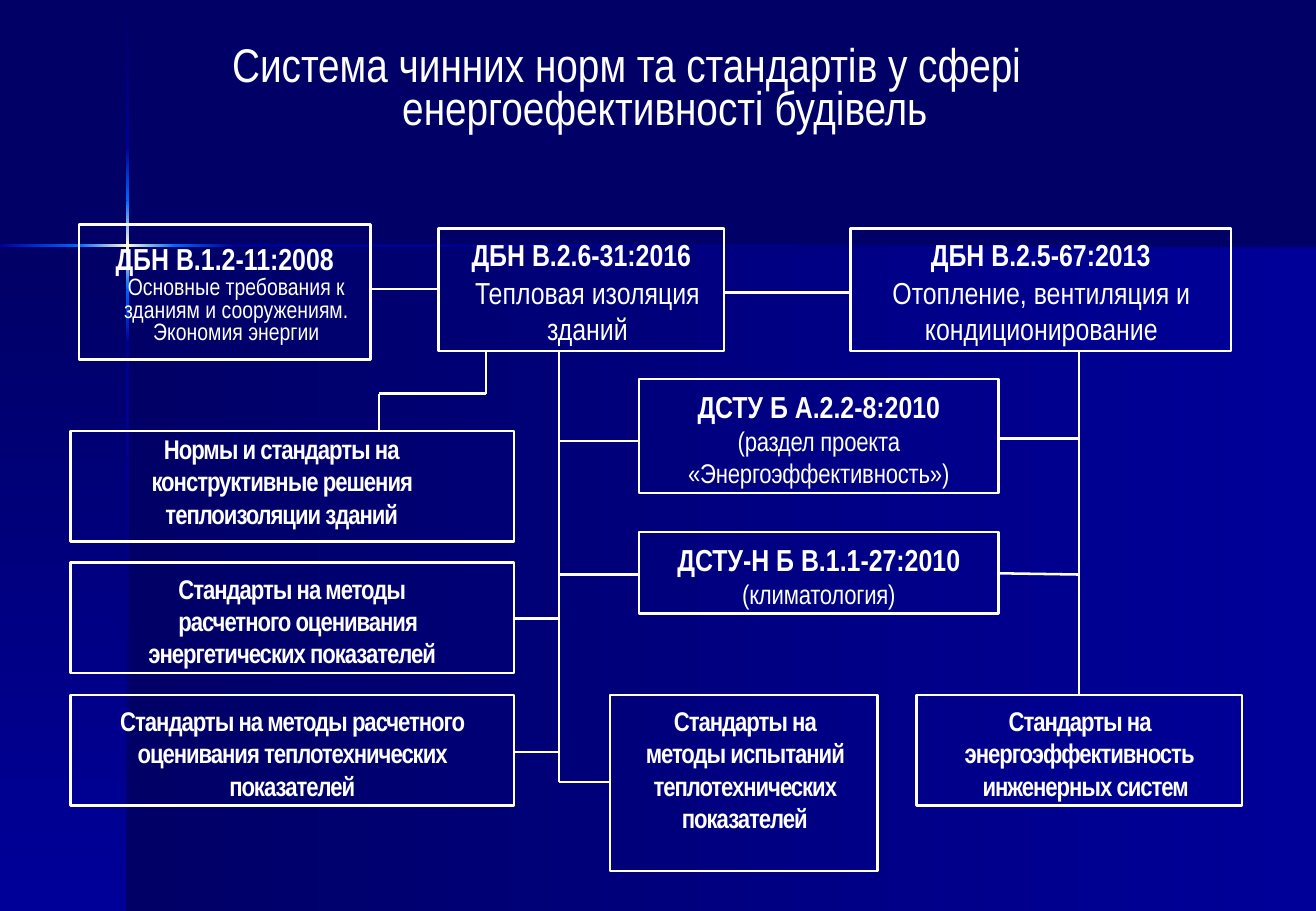
from collections import namedtuple
from dataclasses import dataclass
from itertools import pairwise

from lxml.etree import SubElement
from pptx import Presentation
from pptx.dml.color import RGBColor
from pptx.enum.shapes import MSO_CONNECTOR, MSO_SHAPE
from pptx.enum.text import MSO_ANCHOR, MSO_AUTO_SIZE, PP_ALIGN
from pptx.oxml.ns import qn
from pptx.util import Inches, Pt

Box = namedtuple("Box", "left top width height")
TextStyle = namedtuple("TextStyle", "size bold leading before spacing", defaults=(0, 0))


@dataclass(frozen=True)
class Theme:
    font: str = "Arial Narrow"
    white: str = "FFFFFF"
    navy: str = "000066"
    blue: str = "000099"
    azure: str = "0066FF"
    cream: str = "FFFFCC"
    line: float = 1.5
    title: TextStyle = TextStyle(28, False, Pt(25.9))
    code: TextStyle = TextStyle(18, True, Pt(21.4))
    subject: TextStyle = TextStyle(18, False, Pt(21.6), 0.4)
    detail: TextStyle = TextStyle(14, False, 0.8, 0.4)
    remark: TextStyle = TextStyle(16, False, Pt(19), 0, -0.1)
    group: TextStyle = TextStyle(16, True, 1.0, 0, -0.6)


THEME = Theme()
SLIDE = Box(0, 0, 10.83, 7.5)
STAR_X, STAR_Y, BEAM = 1.05, 2.02, 0.02

# Box, (left, top, right) insets, paragraphs of (text, style, indent)
NORMS = {
    "requirements": (Box(0.65, 1.85, 2.4, 1.11), (0.05, 0.13, 0.05), [
        ("ДБН В.1.2-11:2008", THEME.code, 0),
        ("Основные требования к зданиям и сооружениям. Экономия энергии",
         THEME.detail, 0.19)]),
    "insulation": (Box(3.61, 1.88, 2.35, 1.01), (0.13, 0.07, 0.13), [
        ("ДБН В.2.6-31:2016", THEME.code, 0),
        ("Тепловая изоляция зданий", THEME.subject, 0.1)]),
    "heating": (Box(7, 1.88, 3.13, 1.01), (0.13, 0.07, 0.13), [
        ("ДБН В.2.5-67:2013", THEME.code, 0),
        ("Отопление, вентиляция и кондиционирование", THEME.subject, 0.01)]),
    "efficiency": (Box(5.26, 3.12, 2.96, 0.94), (0.29, 0.08, 0.29), [
        ("ДСТУ Б А.2.2-8:2010", THEME.code, 0),
        ("(раздел проекта", THEME.remark, 0),
        ("«Энергоэффективность»)", THEME.remark, 0)]),
    "climate": (Box(5.26, 4.38, 2.96, 0.67), (0.1, 0.08, 0.1), [
        ("ДСТУ-Н Б В.1.1-27:2010", THEME.code, 0),
        ("(климатология)", THEME.remark, 0)]),
    "structures": (Box(0.58, 3.55, 3.65, 0.91), (0.4, 0.01, 0.63), [
        ("Нормы и стандарты на", THEME.group, 0.06),
        ("конструктивные решения теплоизоляции зданий", THEME.group, 0.06)]),
    "energy": (Box(0.58, 4.63, 3.65, 0.91), (0.24, 0.08, 0.24), [
        ("Стандарты на методы", THEME.group, 0),
        ("расчетного оценивания", THEME.group, 0.1),
        ("энергетических показателей", THEME.group, 0)]),
    "thermal": (Box(0.58, 5.72, 3.65, 0.91), (0.24, 0.08, 0.24), [
        ("Стандарты на методы расчетного оценивания теплотехнических показателей",
         THEME.group, 0)]),
    "testing": (Box(5.02, 5.72, 2.2, 1.45), (0.22, 0.08, 0.2), [
        ("Стандарты на методы испытаний теплотехнических показателей",
         THEME.group, 0)]),
    "systems": (Box(7.54, 5.72, 2.68, 0.91), (0.21, 0.08, 0.2), [
        ("Стандарты на энергоэффективность", THEME.group, 0),
        ("инженерных систем", THEME.group, 0.1)]),
}


def color(value):
    return RGBColor.from_string(value)


def right(box):
    return box.left + box.width


def bottom(box):
    return box.top + box.height


def write(paragraph, text, style, align, indent=0, first_line=0):
    paragraph.alignment = align
    paragraph.line_spacing = style.leading
    paragraph.space_before = Pt(style.before)
    properties = paragraph._p.get_or_add_pPr()
    properties.set("marL", str(Inches(indent)))
    properties.set("indent", str(Inches(first_line)))
    run = paragraph.add_run()
    run.text = text
    run.font.name = THEME.font
    run.font.size = Pt(style.size)
    run.font.bold = style.bold
    run.font.color.rgb = color(THEME.white)
    if style.spacing:
        run._r.get_or_add_rPr().set("spc", str(round(style.spacing * 100)))


def set_frame(frame, left, top, right_inset, anchor):
    frame.word_wrap = True
    frame.auto_size = MSO_AUTO_SIZE.NONE
    frame.vertical_anchor = anchor
    frame.margin_left, frame.margin_top = Inches(left), Inches(top)
    frame.margin_right, frame.margin_bottom = Inches(right_inset), 0


def add_rectangle(slide, box):
    rectangle = slide.shapes.add_shape(MSO_SHAPE.RECTANGLE, *map(Inches, box))
    rectangle.shadow.inherit = False
    return rectangle


def add_gradient(slide, box, start, end, vertical=False):
    panel = add_rectangle(slide, box)
    panel.line.fill.background()
    panel.fill.gradient()
    panel.fill.gradient_angle = 270 if vertical else 0
    for stop, value, position in zip(panel.fill.gradient_stops, (start, end), (0, 1)):
        stop.color.rgb = color(value)
        stop.position = position


def add_backdrop(slide, box):
    """Two shaded panels below a star of two crossing light beams."""
    slide.background.fill.solid()
    slide.background.fill.fore_color.rgb = color(THEME.navy)
    x, y = box.left + STAR_X, box.top + STAR_Y
    depth = bottom(box) - y
    add_gradient(slide, Box(x, y, right(box) - x, depth), THEME.navy, THEME.blue)
    add_gradient(slide, Box(box.left, y, STAR_X, depth), THEME.navy, THEME.blue, True)

    glow = [THEME.blue, THEME.azure, THEME.cream, THEME.azure, THEME.blue, THEME.navy]
    rows = [0.01, 1.21, 1.65, STAR_Y, 2.38, 2.82, box.height]
    for (top, start), (end, finish) in pairwise(zip(rows, [THEME.navy] + glow)):
        beam = Box(x - BEAM / 2, box.top + top, BEAM, end - top)
        add_gradient(slide, beam, start, finish, True)
    columns = [0, 0.65, STAR_X, 1.44, 1.92, box.width]
    for (left, start), (end, finish) in pairwise(zip(columns, glow)):
        beam = Box(box.left + left, y - BEAM / 2, end - left, BEAM)
        add_gradient(slide, beam, start, finish)


def add_title(slide, box):
    title = slide.shapes.title
    title.left, title.top, title.width, title.height = map(Inches, box)
    set_frame(title.text_frame, 0, 0.04, 0, MSO_ANCHOR.MIDDLE)
    write(title.text_frame.paragraphs[0],
          "Система чинних норм та стандартів у сфері енергоефективності будівель",
          THEME.title, PP_ALIGN.LEFT, 2.54, -1.4)


def add_norm(slide, box, insets, lines):
    norm = add_rectangle(slide, box)
    norm.fill.background()
    norm.line.color.rgb = color(THEME.white)
    norm.line.width = Pt(THEME.line)
    frame = norm.text_frame
    set_frame(frame, *insets, MSO_ANCHOR.TOP)
    for number, (text, style, indent) in enumerate(lines):
        paragraph = frame.add_paragraph() if number else frame.paragraphs[0]
        write(paragraph, text, style, PP_ALIGN.CENTER, indent)


def add_links(slide, boxes):
    insulation, heating = boxes["insulation"], boxes["heating"]
    efficiency, climate = boxes["efficiency"], boxes["climate"]
    structures, testing = boxes["structures"], boxes["testing"]
    trunk, heating_trunk = 4.6, 8.88
    elbow_start, elbow_end, elbow_y = 4, 3.12, 3.24
    base = bottom(insulation)
    routes = [
        [(right(boxes["requirements"]), 2.38), (insulation.left, 2.38)],
        [(right(insulation), 2.41), (heating.left, 2.41)],
        [(elbow_start, base), (elbow_start, elbow_y), (elbow_end, elbow_y),
         (elbow_end, structures.top)],
        [(trunk, base), (trunk, 6.44), (testing.left, 6.44)],
        [(trunk, 3.63), (efficiency.left, 3.63)],
        [(trunk, 4.73), (climate.left, 4.73)],
        [(right(boxes["energy"]), 5.09), (trunk, 5.09)],
        [(right(boxes["thermal"]), 6.19), (trunk, 6.19)],
        [(heating_trunk, bottom(heating)), (heating_trunk, boxes["systems"].top)],
        [(right(efficiency), 3.61), (heating_trunk, 3.61)],
        [(right(climate), 4.72), (heating_trunk, 4.73)],
    ]
    for route in routes:
        for start, end in pairwise(route):
            link = slide.shapes.add_connector(
                MSO_CONNECTOR.STRAIGHT, *map(Inches, start + end))
            link.line.color.rgb = color(THEME.white)
            link.line.width = Pt(THEME.line)
            SubElement(link._element.spPr, qn("a:effectLst"))


def main():
    deck = Presentation()
    deck.slide_width, deck.slide_height = Inches(SLIDE.width), Inches(SLIDE.height)
    slide = deck.slides.add_slide(deck.slide_layouts[5])
    add_backdrop(slide, SLIDE)
    add_title(slide, Box(0.77, 0.35, 8.94, 0.77))
    for box, insets, lines in NORMS.values():
        add_norm(slide, box, insets, lines)
    add_links(slide, {name: norm[0] for name, norm in NORMS.items()})
    deck.save("out.pptx")


if __name__ == "__main__":
    main()
